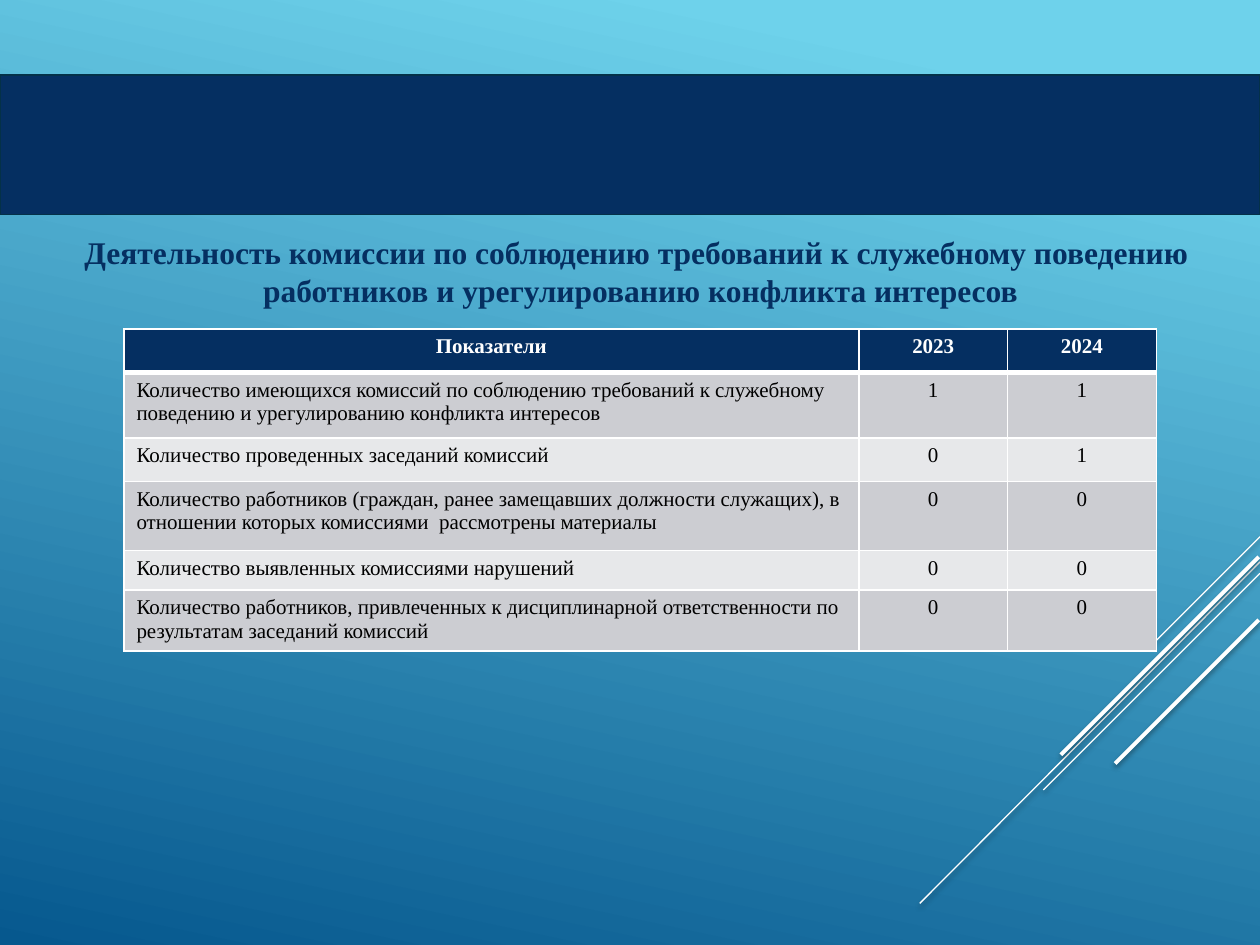
from dataclasses import dataclass
from typing import NamedTuple

from lxml.etree import SubElement
from pptx import Presentation
from pptx.dml.color import RGBColor
from pptx.enum.shapes import MSO_CONNECTOR, MSO_SHAPE
from pptx.enum.text import MSO_ANCHOR, MSO_AUTO_SIZE, PP_ALIGN
from pptx.oxml import parse_xml
from pptx.oxml.ns import nsdecls, qn
from pptx.util import Pt


@dataclass(frozen=True)
class Theme:
    font: str = "Times New Roman"
    navy: str = "052F61"
    edge: str = "043148"
    white: str = "FFFFFF"
    black: str = "000000"
    sky: str = "6ED2EB"
    deep: str = "06588E"
    bands: tuple = ("CCCDD2", "E7E8EA")
    title: float = 18
    body: float = 12


class Ray(NamedTuple):
    x1: float
    y1: float
    x2: float
    y2: float
    width: float


class Row(NamedTuple):
    height: float
    cells: tuple


THEME = Theme()
THIN, THICK = 0.75, 2.25
RAYS = (
    Ray(720, 306.7, 660.2, 366.5, THIN),
    Ray(720, 321.1, 525.6, 516.2, THIN),
    Ray(720, 327.6, 596.2, 451.4, THIN),
    Ray(719.3, 318.2, 606.2, 431.3, THICK),
    Ray(719.3, 354.2, 637.2, 436.3, THICK),
)
WIDTHS = (420, 85, 85)
ROWS = (
    Row(25, ("Показатели", "2023", "2024")),
    Row(37.3, ("Количество имеющихся комиссий по соблюдению требований к служебному "
               "поведению и урегулированию конфликта интересов", "1", "1")),
    Row(25, ("Количество проведенных заседаний комиссий", "0", "1")),
    Row(39.5, ("Количество работников (граждан, ранее замещавших должности служащих), в "
               "отношении которых комиссиями  рассмотрены материалы", "0", "0")),
    Row(22.5, ("Количество выявленных комиссиями нарушений", "0", "0")),
    Row(34.8, ("Количество работников, привлеченных к дисциплинарной ответственности по "
               "результатам заседаний комиссий", "0", "0")),
)


def rgb(code: str) -> RGBColor:
    return RGBColor.from_string(code)


def paint(fill, code: str) -> None:
    fill.solid()
    fill.fore_color.rgb = rgb(code)


def write(frame, text: str, size: float, color: str, bold: bool, align) -> None:
    para = frame.paragraphs[0]
    para.alignment = align
    run = para.add_run()
    run.text = text
    font = run.font
    font.name, font.size, font.bold = THEME.font, Pt(size), bold
    font.color.rgb = rgb(color)


def draw_back(slide) -> None:
    fill = slide.background.fill
    fill.gradient()
    fill.gradient_angle = 258
    stops = ((0.1, THEME.sky), (1, THEME.deep))
    for stop, (place, code) in zip(fill.gradient_stops, stops):
        stop.position = place
        stop.color.rgb = rgb(code)


def draw_ray(slide, ray: Ray) -> None:
    ends = [Pt(value) for value in ray[:4]]
    line = slide.shapes.add_connector(MSO_CONNECTOR.STRAIGHT, *ends)
    line.line.width = Pt(ray.width)
    paint(line.line.fill, THEME.white)
    line.element.spPr.append(parse_xml(
        f'<a:effectLst {nsdecls("a")}><a:outerShdw blurRad="{Pt(3.1)}" '
        f'dist="{Pt(1.6)}" dir="5400000"><a:srgbClr val="{THEME.black}">'
        '<a:alpha val="38000"/></a:srgbClr></a:outerShdw></a:effectLst>'))


def draw_band(slide) -> None:
    band = slide.shapes.add_shape(
        MSO_SHAPE.FLOWCHART_PROCESS, Pt(0), Pt(43), Pt(720), Pt(79.5))
    band.shadow.inherit = False
    paint(band.fill, THEME.navy)
    paint(band.line.fill, THEME.edge)
    band.line.width = Pt(1)


def draw_title(slide, text: str) -> None:
    title = slide.shapes.title
    title.left, title.top, title.width, title.height = map(Pt, (17, 129.6, 698, 50.4))
    frame = title.text_frame
    frame.word_wrap = True
    frame.auto_size = MSO_AUTO_SIZE.NONE
    frame.vertical_anchor = MSO_ANCHOR.TOP
    write(frame, text, THEME.title, THEME.navy, True, PP_ALIGN.CENTER)


def set_edges(cell, top: float, bottom: float) -> None:
    """Draw white cell borders; call before filling, as the schema wants them first."""
    props = cell._tc.get_or_add_tcPr()
    for side, width in (("L", 1), ("R", 1), ("T", top), ("B", bottom)):
        edge = SubElement(props, qn(f"a:ln{side}"), w=str(Pt(width)))
        fill = SubElement(edge, qn("a:solidFill"))
        SubElement(fill, qn("a:srgbClr"), val=THEME.white)


def draw_table(slide) -> None:
    high = sum(row.height for row in ROWS)
    table = slide.shapes.add_table(
        len(ROWS), len(WIDTHS), Pt(70.8), Pt(187.9), Pt(sum(WIDTHS)), Pt(high)).table
    for col, width in zip(table.columns, WIDTHS):
        col.width = Pt(width)
    for i, row in enumerate(ROWS):
        table.rows[i].height = Pt(row.height)
        head = i == 0
        for j, text in enumerate(row.cells):
            cell = table.cell(i, j)
            set_edges(cell, 3 if i == 1 else 1, 3 if head else 1)
            paint(cell.fill, THEME.navy if head else THEME.bands[(i - 1) % 2])
            align = PP_ALIGN.CENTER if head or j else PP_ALIGN.LEFT
            color = THEME.white if head else THEME.black
            write(cell.text_frame, text, THEME.body, color, head, align)


def main() -> None:
    deck = Presentation()
    deck.slide_width, deck.slide_height = Pt(720), Pt(540)
    slide = deck.slides.add_slide(deck.slide_layouts[5])
    draw_back(slide)
    for ray in RAYS:
        draw_ray(slide, ray)
    draw_band(slide)
    draw_title(slide, "Деятельность комиссии по соблюдению требований к служебному "
                      "поведению  работников и урегулированию конфликта интересов")
    draw_table(slide)
    deck.save("out.pptx")


if __name__ == "__main__":
    main()
